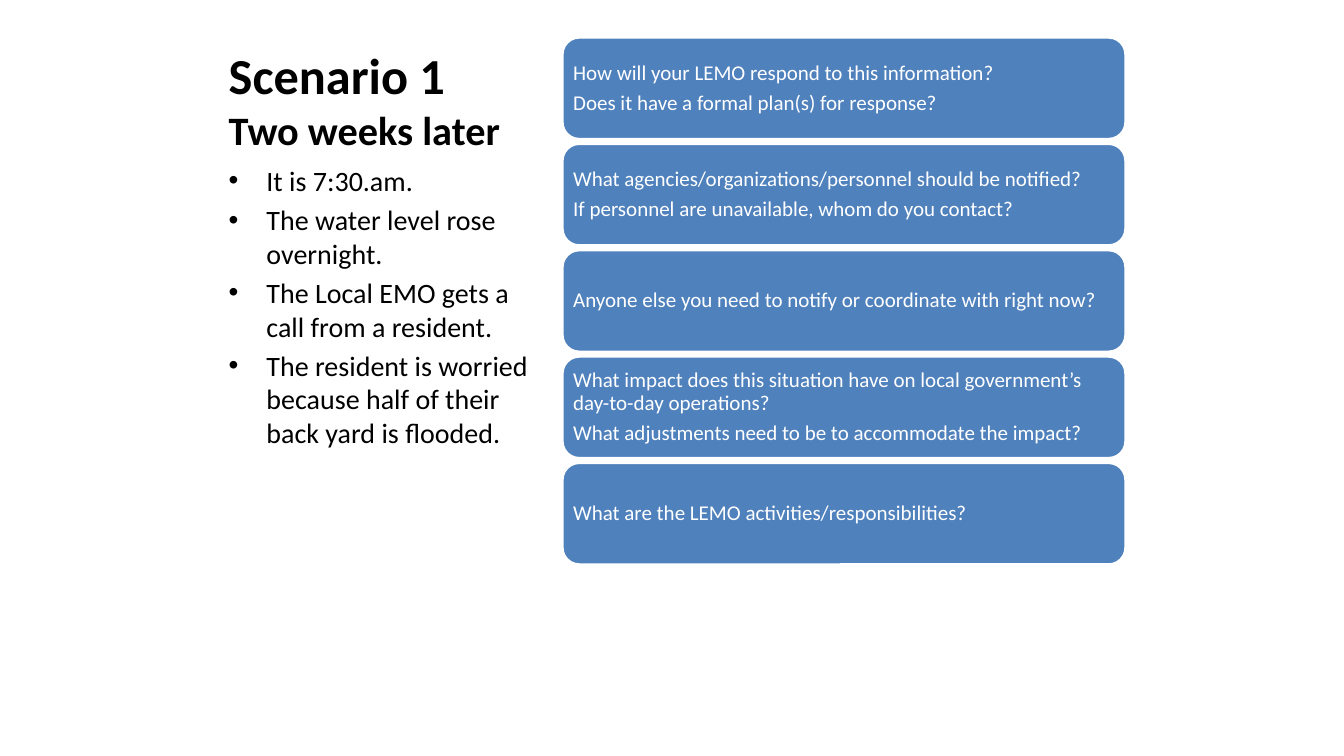
from lxml import etree
from pptx import Presentation
from pptx import util as u
from pptx.dml.color import RGBColor
from pptx.enum import shapes, text
from pptx.oxml.ns import qn

HUES = {"ink": "000000", "card": "4F81BD", "white": "FFFFFF"}
FACTS = [
    "It is 7:30.am.",
    "The water level rose overnight.",
    "The Local EMO gets a call from a resident.",
    "The resident is worried because half of their back yard is flooded.",
]
CARDS = [
    ["How will your LEMO respond to this information?",
     "Does it have a formal plan(s) for response?"],
    ["What agencies/organizations/personnel should be notified?",
     "If personnel are unavailable, whom do you contact?"],
    ["Anyone else you need to notify or coordinate with right now?"],
    ["What impact does this situation have on local government’s day-to-day operations?",
     "What adjustments need to be to accommodate the impact?"],
    ["What are the LEMO activities/responsibilities?"],
]


def add_run(para, words, size, hue, bold=False):
    run = para.add_run()
    run.text = words
    font = run.font
    font.name, font.size, font.bold = "Calibri", u.Pt(size), bold
    font.color.rgb = RGBColor.from_string(HUES[hue])


def place(item, left, top, width, height):
    item.left, item.top = u.Cm(left), u.Cm(top)
    item.width, item.height = u.Cm(width), u.Cm(height)
    item.text_frame.word_wrap = True
    item.text_frame.auto_size = text.MSO_AUTO_SIZE.NONE


deck = Presentation()
deck.slide_width, deck.slide_height = u.Cm(33.87), u.Cm(19.05)
slide = deck.slides.add_slide(deck.slide_layouts[1])

# Title
title = slide.shapes.title
place(title, 5.51, 0.76, 8.36, 3.23)
title.text_frame.vertical_anchor = text.MSO_ANCHOR.BOTTOM
para = title.text_frame.paragraphs[0]
para.alignment = text.PP_ALIGN.LEFT
add_run(para, "Scenario 1", 36, "ink", True)
para.add_line_break()
add_run(para, "Two weeks later", 28.8, "ink", True)

# Facts
body = slide.placeholders[1]
place(body, 5.51, 3.99, 8.36, 10.41)
frame = body.text_frame
for i, fact in enumerate(FACTS):
    para = frame.add_paragraph() if i else frame.paragraphs[0]
    para.space_before = u.Pt(4 if i else 0)
    props = para._p.get_or_add_pPr()
    props.set("marL", str(u.Cm(0.95)))
    props.set("indent", str(-u.Cm(0.95)))
    etree.SubElement(props, qn("a:buFont")).set("typeface", "Arial")
    etree.SubElement(props, qn("a:buChar")).set("char", "•")
    add_run(para, fact, 20, "ink")

# Question cards
for row, lines in enumerate(CARDS):
    card = slide.shapes.add_shape(shapes.MSO_SHAPE.ROUNDED_RECTANGLE, 0, 0, 0, 0)
    place(card, 14.17, 0.94 + 2.68 * row, 14.2, 2.57)
    card.shadow.inherit = False
    card.fill.solid()
    card.fill.fore_color.rgb = RGBColor.from_string(HUES["card"])
    card.line.color.rgb = RGBColor.from_string(HUES["white"])
    card.line.width = u.Pt(2)
    frame = card.text_frame
    frame.vertical_anchor = text.MSO_ANCHOR.MIDDLE
    frame.margin_left = frame.margin_right = u.Cm(0.15)
    frame.margin_top = frame.margin_bottom = u.Cm(0.15)
    for i, line in enumerate(lines):
        para = frame.add_paragraph() if i else frame.paragraphs[0]
        para.alignment = text.PP_ALIGN.LEFT
        para.line_spacing = 0.9
        para.space_after = u.Pt(5.25)
        add_run(para, line, 15, "white")

deck.save("out.pptx")
